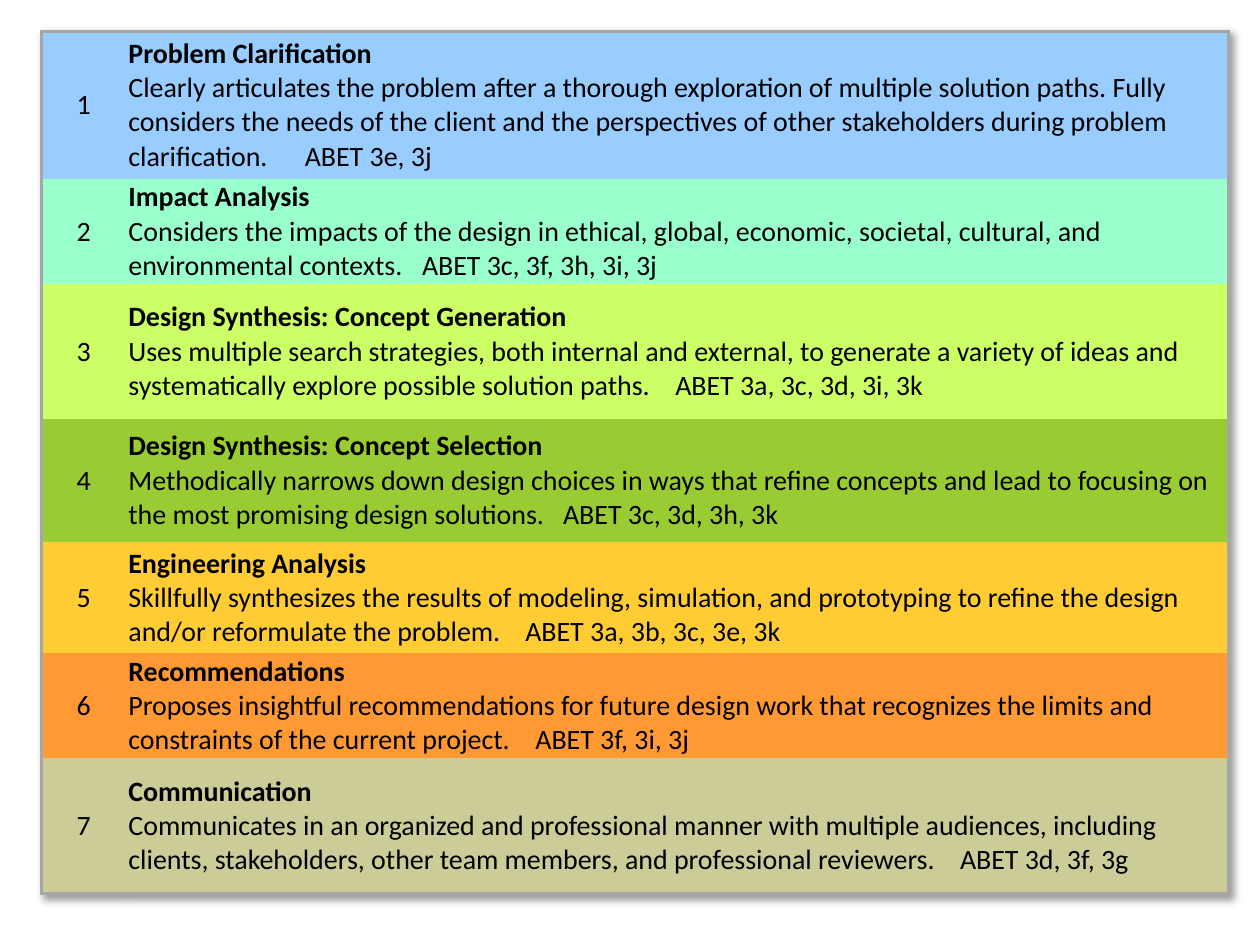
from lxml import etree
from pptx import Presentation
from pptx.dml.color import RGBColor
from pptx.enum.text import MSO_ANCHOR, PP_ALIGN
from pptx.oxml import parse_xml
from pptx.oxml.ns import nsdecls, qn
from pptx.util import Inches, Pt

BLACK = RGBColor(0x00, 0x00, 0x00)
GREY = RGBColor(0xA6, 0xA6, 0xA6)
BLUE = RGBColor(0x99, 0xCC, 0xFF)
MINT = RGBColor(0x99, 0xFF, 0xCC)
LIME = RGBColor(0xCC, 0xFF, 0x66)
GREEN = RGBColor(0x99, 0xCC, 0x33)
YELLOW = RGBColor(0xFF, 0xCC, 0x33)
ORANGE = RGBColor(0xFF, 0x99, 0x33)
KHAKI = RGBColor(0xCC, 0xCC, 0x99)

NO_STYLE = "{2D5ABB26-0587-4C30-8999-92F81FD0307C}"
COLUMNS = (0.67, 8.75)

# Fill, row height, heading, description, outcome codes, tab stop of the codes
CRITERIA = [
    (BLUE, 1.17, "Problem Clarification",
     "Clearly articulates the problem after a thorough exploration of multiple "
     "solution paths. Fully considers the needs of the client and the perspectives "
     "of other stakeholders during problem clarification.",
     "ABET 3e, 3j", 1.4),
    (MINT, 0.79, "Impact Analysis",
     "Considers the impacts of the design in ethical, global, economic, societal, "
     "cultural, and environmental contexts.",
     "ABET 3c, 3f, 3h, 3i, 3j", 2.33),
    (LIME, 1.07, "Design Synthesis: Concept Generation",
     "Uses multiple search strategies, both internal and external, to generate a "
     "variety of ideas and systematically explore possible solution paths.",
     "ABET 3a, 3c, 3d, 3i, 3k", 4.34),
    (GREEN, 0.98, "Design Synthesis: Concept Selection",
     "Methodically narrows down design choices in ways that refine concepts and "
     "lead to focusing on the most promising design solutions.",
     "ABET 3c, 3d, 3h, 3k", 3.45),
    (YELLOW, 0.88, "Engineering Analysis",
     "Skillfully synthesizes the results of modeling, simulation, and prototyping "
     "to refine the design and/or reformulate the problem.",
     "ABET 3a, 3b, 3c, 3e, 3k", 3.15),
    (ORANGE, 0.79, "Recommendations",
     "Proposes insightful recommendations for future design work that recognizes "
     "the limits and constraints of the current project.",
     "ABET 3f, 3i, 3j", 3.23),
    (KHAKI, 1.07, "Communication",
     "Communicates in an organized and professional manner with multiple audiences, "
     "including clients, stakeholders, other team members, and professional reviewers.",
     "ABET 3d, 3f, 3g", 6.6),
]


class RubricSlide:
    font = {"name": "Calibri", "size": Pt(16)}
    cell_format = {
        "vertical_anchor": MSO_ANCHOR.MIDDLE,
        "margin_left": Inches(0.02), "margin_right": Inches(0.02),
        "margin_top": Inches(0.01), "margin_bottom": Inches(0.01),
    }

    def __init__(self, prs):
        self.slide = prs.slides.add_slide(prs.slide_layouts[6])

    def table(self, left, top, widths, heights):
        frame = self.slide.shapes.add_table(
            len(heights), len(widths), Inches(left), Inches(top),
            Inches(sum(widths)), Inches(sum(heights)))
        table = frame.table
        table.first_row = table.horz_banding = False
        for column, width in zip(table.columns, widths):
            column.width = Inches(width)
        for row, height in zip(table.rows, heights):
            row.height = Inches(height)
        props = table._tbl.tblPr
        props.find(qn("a:tableStyleId")).text = NO_STYLE
        props.insert(0, parse_xml(
            f'<a:effectLst {nsdecls("a")}><a:outerShdw blurRad="50800" dist="38100" '
            'dir="2700000" algn="tl" rotWithShape="0"><a:prstClr val="black">'
            '<a:alpha val="40000"/></a:prstClr></a:outerShdw></a:effectLst>'))
        return table

    def cell(self, cell, fill, sides):
        """Format a cell, with a border on each of sides (L, R, T, B), and return its paragraph."""
        for name, value in self.cell_format.items():
            setattr(cell, name, value)
        for side in sides:
            cell._tc.get_or_add_tcPr().append(parse_xml(
                f'<a:ln{side} {nsdecls("a")} w="{Pt(2.25)}"><a:solidFill>'
                f'<a:srgbClr val="{GREY}"/></a:solidFill></a:ln{side}>'))
        cell.fill.solid()
        cell.fill.fore_color.rgb = fill
        return cell.text_frame.paragraphs[0]

    def tab_stop(self, p, position):
        tabs = etree.SubElement(p._p.get_or_add_pPr(), qn("a:tabLst"))
        etree.SubElement(tabs, qn("a:tab"), pos=str(Inches(position)), algn="l")

    def run(self, p, text, bold=False):
        r = p.add_run()
        r.text = text
        for name, value in {**self.font, "bold": bold}.items():
            setattr(r.font, name, value)
        r.font.color.rgb = BLACK


def main():
    prs = Presentation()
    prs.slide_width, prs.slide_height = Inches(10), Inches(7.5)
    rubric = RubricSlide(prs)
    table = rubric.table(0.33, 0.25, COLUMNS, [row[1] for row in CRITERIA])
    last = len(CRITERIA) - 1

    for i, (fill, _, heading, description, codes, stop) in enumerate(CRITERIA):
        edges = ("T" if i == 0 else "") + ("B" if i == last else "")
        p = rubric.cell(table.cell(i, 0), fill, "L" + edges)
        p.alignment = PP_ALIGN.CENTER
        rubric.run(p, str(i + 1))

        p = rubric.cell(table.cell(i, 1), fill, "R" + edges)
        rubric.tab_stop(p, stop)
        rubric.run(p, heading, bold=True)
        p.add_line_break()
        rubric.run(p, f"{description}\t{codes}")

    prs.save("out.pptx")


if __name__ == "__main__":
    main()
